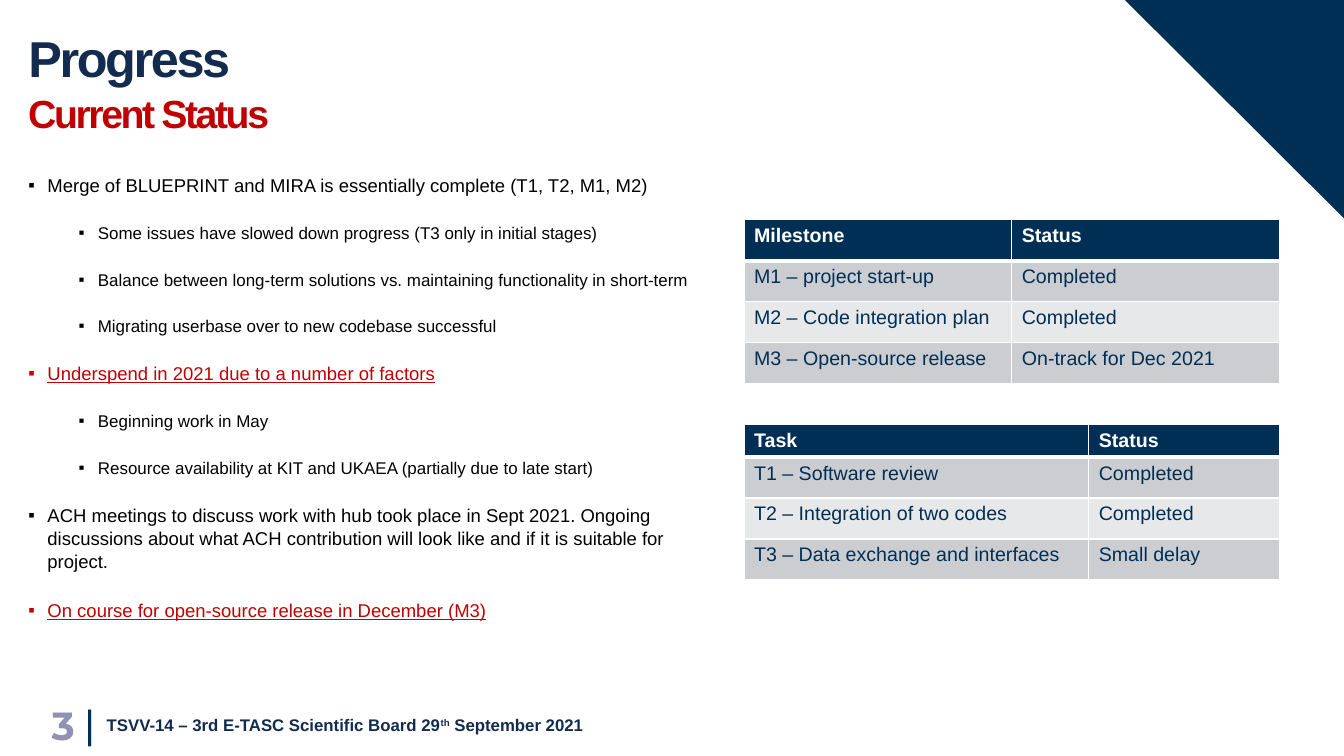
"""Build the project progress slide with status bullets and two status tables."""
import pptx
import pptx.dml.color
import pptx.enum.text
import pptx.oxml.ns
import pptx.util
from lxml import etree

Pt = pptx.util.Pt
RGBColor = pptx.dml.color.RGBColor
Align = pptx.enum.text.PP_ALIGN
Anchor = pptx.enum.text.MSO_ANCHOR
qn = pptx.oxml.ns.qn

NAVY = RGBColor(0x00, 0x2F, 0x56)
INK = RGBColor(0x13, 0x2B, 0x4E)
RED = RGBColor(0xC0, 0x00, 0x00)
BLACK = RGBColor(0x00, 0x00, 0x00)
WHITE = RGBColor(0xFF, 0xFF, 0xFF)
LILAC = RGBColor(0x90, 0x91, 0xB3)
BANDS = [RGBColor(0xCC, 0xCD, 0xD1), RGBColor(0xE7, 0xE8, 0xE9)]

HEADING = {"name": "Arial", "size": Pt(36), "bold": True}
SUBHEADING = {"name": "Arial", "size": Pt(28), "bold": True}
FOOTER = {"name": "Arial", "size": Pt(12), "bold": True}
NUMBER = {"name": "Montserrat", "size": Pt(28), "bold": True}
DIVIDER = {"name": "Arial", "size": Pt(28), "bold": False}
HEAD_CELL = {"name": "Arial", "size": Pt(14), "bold": True}
BODY_CELL = {"name": "Arial", "size": Pt(14), "bold": False}
LEVELS = [
    {"name": "Arial", "size": Pt(13.2), "bold": False},
    {"name": "Arial", "size": Pt(12.1), "bold": False},
]
INDENTS = [13.7, 49.7]
TIGHT = {"spc": "-170"}

POINTS = [
    (0, "Merge of BLUEPRINT and MIRA is essentially complete (T1, T2, M1, M2)", False),
    (1, "Some issues have slowed down progress (T3 only in initial stages)", False),
    (1, "Balance between long-term solutions vs. maintaining functionality in short-term", False),
    (1, "Migrating userbase over to new codebase successful", False),
    (0, "Underspend in 2021 due to a number of factors", True),
    (1, "Beginning work in May", False),
    (1, "Resource availability at KIT and UKAEA (partially due to late start)", False),
    (0, "ACH meetings to discuss work with hub took place in Sept 2021. Ongoing discussions "
        "about what ACH contribution will look like and if it is suitable for project.", False),
    (0, "On course for open-source release in December (M3)", True),
]
FOOTER_PARTS = [
    ("TSVV-14 – 3rd E-TASC Scientific Board 29", {}),
    ("th", {"baseline": "30000"}),
    (" September 2021", {}),
]
ROW_HEIGHT = 29.2
TABLES = [
    {"top": 157, "columns": (191.3, 191.3), "head": ROW_HEIGHT, "rows": [
        ("Milestone", "Status"),
        ("M1 – project start-up", "Completed"),
        ("M2 – Code integration plan", "Completed"),
        ("M3 – Open-source release", "On-track for Dec 2021"),
    ]},
    {"top": 303.3, "columns": (246.3, 136.3), "head": 23.3, "rows": [
        ("Task", "Status"),
        ("T1 – Software review", "Completed"),
        ("T2 – Integration of two codes", "Completed"),
        ("T3 – Data exchange and interfaces", "Small delay"),
    ]},
]


def write(paragraph, words, look, color, extra=None):
    """Add a formatted run to a paragraph."""
    run = paragraph.add_run()
    run.text = words
    for key, value in look.items():
        setattr(run.font, key, value)
    run.font.color.rgb = color
    for key, value in (extra or {}).items():
        run.font._element.set(key, value)


def place(part, left, top, width, height, anchor=Anchor.TOP):
    """Position a text shape and return its text frame."""
    for key, value in zip(("left", "top", "width", "height"), (left, top, width, height)):
        setattr(part, key, Pt(value))
    frame = part.text_frame
    settings = {"word_wrap": True, "auto_size": pptx.enum.text.MSO_AUTO_SIZE.NONE,
                "vertical_anchor": anchor}
    for key, value in settings.items():
        setattr(frame, key, value)
    return frame


def label(slide, box, anchor=Anchor.TOP):
    """Add a text box and return its text frame."""
    return place(slide.shapes.add_textbox(0, 0, 0, 0), *box, anchor)


def add_corner(slide):
    """Draw the triangle in the top right corner."""
    builder = slide.shapes.build_freeform(Pt(803.5), Pt(0))
    builder.add_line_segments([(Pt(960), Pt(0)), (Pt(960), Pt(156))], close=True)
    corner = builder.convert_to_shape()
    corner.shadow.inherit = False
    corner.fill.solid()
    corner.fill.fore_color.rgb = NAVY
    corner.line.fill.background()


def add_points(frame):
    """Fill the body with the two-level status list."""
    for index, (level, words, highlight) in enumerate(POINTS):
        point = frame.paragraphs[0] if index == 0 else frame.add_paragraph()
        properties = point._p.get_or_add_pPr()
        properties.set("marL", str(Pt(INDENTS[level])))
        properties.set("indent", str(-Pt(INDENTS[0])))
        etree.SubElement(properties, qn("a:buFont"), typeface="Arial")
        etree.SubElement(properties, qn("a:buChar"), char="▪")
        spacing = {"level": level, "alignment": Align.LEFT, "line_spacing": 1.05,
                   "space_before": Pt(0), "space_after": Pt(18)}
        for key, value in spacing.items():
            setattr(point, key, value)
        write(point, words, {**LEVELS[level], "underline": highlight}, RED if highlight else BLACK)


def add_borders(cell, widths):
    """Give a cell white borders, ahead of its fill."""
    properties = cell._tc.get_or_add_tcPr()
    for index, (side, width) in enumerate(widths.items()):
        border = etree.Element(qn("a:" + side), w=str(Pt(width)))
        fill = etree.SubElement(border, qn("a:solidFill"))
        etree.SubElement(fill, qn("a:srgbClr"), val=str(WHITE))
        properties.insert(index, border)


def add_status(slide, status):
    """Add one status table."""
    rows, columns = status["rows"], status["columns"]
    heights = [status["head"]] + [ROW_HEIGHT] * (len(rows) - 1)
    table = slide.shapes.add_table(len(rows), len(columns), Pt(531.4), Pt(status["top"]),
                                   Pt(sum(columns)), Pt(sum(heights))).table
    for column, width in zip(table.columns, columns):
        column.width = Pt(width)
    for index, entries in enumerate(rows):
        table.rows[index].height = Pt(heights[index])
        head = index == 0
        for cell, words in zip(table.rows[index].cells, entries):
            cell.fill.solid()
            cell.fill.fore_color.rgb = NAVY if head else BANDS[(index - 1) % 2]
            write(cell.text_frame.paragraphs[0], words,
                  HEAD_CELL if head else BODY_CELL, WHITE if head else NAVY)
            add_borders(cell, {"lnL": 1, "lnR": 1, "lnT": 3 if index == 1 else 1,
                               "lnB": 3 if head else 1})


def main():
    """Assemble and save the slide."""
    deck = pptx.Presentation()
    deck.slide_width, deck.slide_height = Pt(960), Pt(540)
    slide = deck.slides.add_slide(deck.slide_layouts[1])
    add_corner(slide)

    divider = label(slide, (60.5, 502, 7.3, 28.8), Anchor.MIDDLE)
    for side in ("margin_left", "margin_right", "margin_top", "margin_bottom"):
        setattr(divider, side, 0)
    divider.word_wrap = False
    write(divider.paragraphs[0], "|", DIVIDER, NAVY)

    heading = place(slide.shapes.title, 13, 15.8, 789, 104.4).paragraphs[0]
    heading.alignment = Align.LEFT
    write(heading, "Progress", HEADING, INK, TIGHT)
    add_points(place(slide.placeholders[1], 13, 120.2, 506.2, 374.4))

    footer = label(slide, (69.1, 503.3, 551.5, 28.8), Anchor.MIDDLE).paragraphs[0]
    for words, extra in FOOTER_PARTS:
        write(footer, words, FOOTER, INK, extra)
    number = label(slide, (7.9, 503.3, 52.6, 28.8), Anchor.MIDDLE).paragraphs[0]
    number.alignment = Align.RIGHT
    write(number, "3", NUMBER, LILAC)
    subheading = label(slide, (13, 60.5, 864.7, 36.7)).paragraphs[0]
    write(subheading, "Current Status", SUBHEADING, RED, TIGHT)

    for status in TABLES:
        add_status(slide, status)
    deck.save("out.pptx")


if __name__ == "__main__":
    main()
